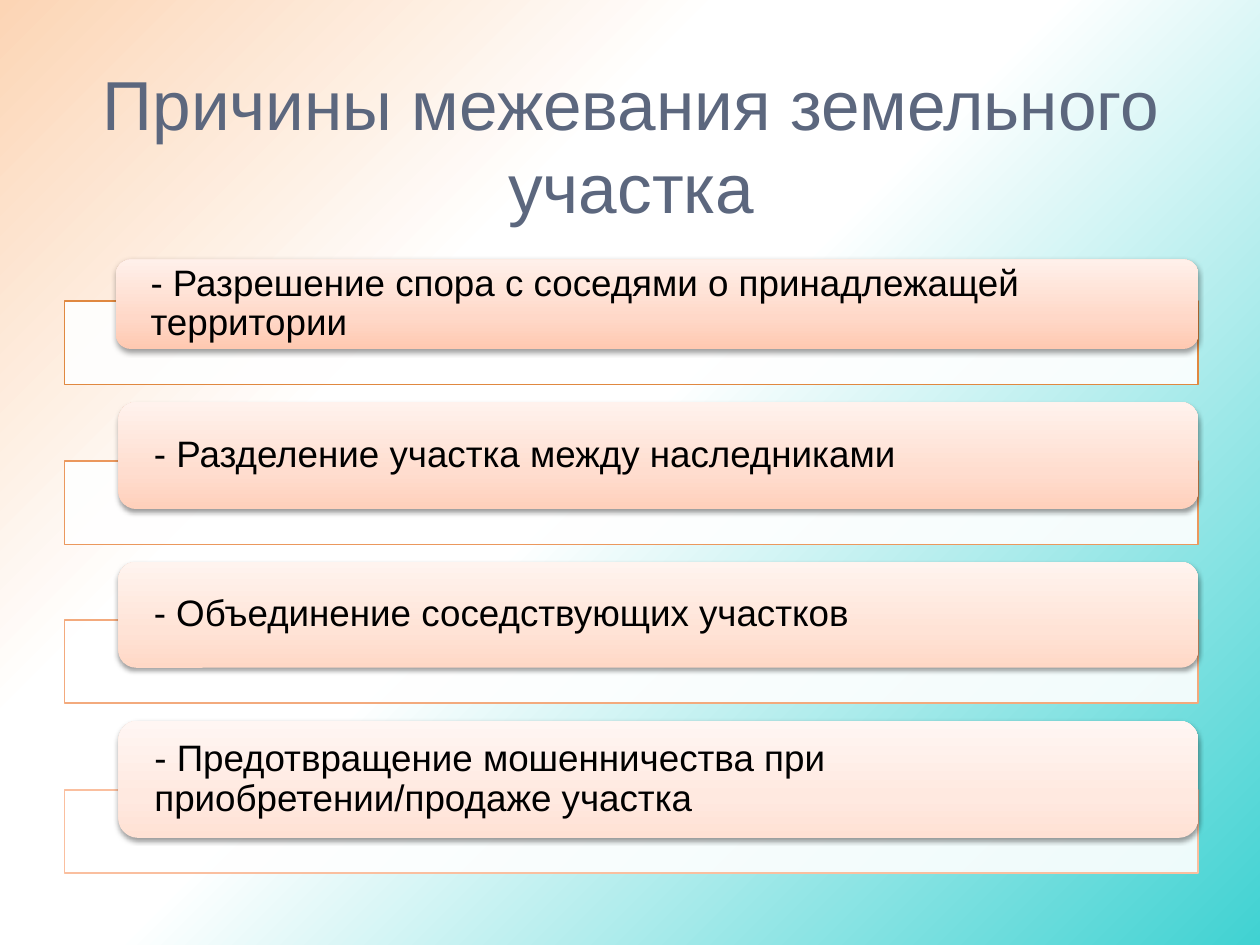
from lxml import etree
from pptx import Presentation
from pptx import util as u
from pptx.dml.color import RGBColor
from pptx.enum import shapes, text
from pptx.oxml.ns import qn

TITLE = "Причины межевания земельного участка"
BACKGROUND = [(0, "FCD5B5"), (33, "FFFFFF"), (48, "FFFFFF"), (100, "40D2D2")]
# wording, pill left, pill height, bar outline, pill gradient from bottom to top
REASONS = [
    ("- Разрешение спора с соседями о принадлежащей территории",
     0.92, 0.71, "E08840", ("FFC9B1", "FFD8C8", "FFF0EA")),
    ("- Разделение участка между наследниками",
     0.94, 0.85, "EB985D", ("FFD0BB", "FFDDCF", "FFF2ED")),
    ("- Объединение соседствующих участков",
     0.94, 0.84, "F3AA7D", ("FFD8C6", "FFE3D6", "FFF4EF")),
    ("- Предотвращение мошенничества при приобретении/продаже участка",
     0.94, 0.93, "FABF9F", ("FFE1D4", "FFE9E0", "FFF6F3")),
]
PILL_STOPS = (0, 35, 100)
LEFT, WIDTH, FIRST_TOP = 0.51, 9, 2.06
BAR_HEIGHT, OVERLAP, GAP = 0.66, 0.38, 0.14


def colour(value):
    return RGBColor.from_string(value)


def add_node(parent, tag, **attributes):
    return etree.SubElement(parent, qn(tag), {k: str(v) for k, v in attributes.items()})


def set_gradient(fill, element, stops, angle):
    """Fill with any number of stops; angle runs counter-clockwise."""
    fill.gradient()
    fill.gradient_angle = angle
    stop_list = next(element.iter(qn("a:gsLst")))
    for old in list(stop_list):
        stop_list.remove(old)
    for position, value in stops:
        stop = add_node(stop_list, "a:gs", pos=position * 1000)
        add_node(stop, "a:srgbClr", val=value)


def add_shadow(shape):
    shape.shadow.inherit = False
    effects = next(shape.element.iter(qn("a:effectLst")))
    shadow = add_node(effects, "a:outerShdw", blurRad=u.Pt(3.1), dist=u.Pt(1.6),
                      dir=90 * 60000, rotWithShape=0)
    add_node(add_node(shadow, "a:srgbClr", val="000000"), "a:alpha", val=38000)


def write(shape, wording, size, ink, align, inset, spacing):
    frame = shape.text_frame
    settings = dict(word_wrap=True, auto_size=text.MSO_AUTO_SIZE.NONE,
                    vertical_anchor=text.MSO_ANCHOR.MIDDLE,
                    margin_left=u.Inches(inset), margin_right=u.Inches(inset),
                    margin_top=0, margin_bottom=0)
    for name, value in settings.items():
        setattr(frame, name, value)
    para = frame.paragraphs[0]
    para.alignment, para.line_spacing = align, spacing
    span = para.add_run()
    span.text = wording
    span.font.name, span.font.size = "Arial", u.Pt(size)
    span.font.color.rgb = colour(ink)


def add_bar(page, top, outline):
    bar = page.shapes.add_shape(shapes.MSO_SHAPE.RECTANGLE,
                                *map(u.Inches, (LEFT, top, WIDTH, BAR_HEIGHT)))
    bar.shadow.inherit = False
    bar.fill.solid()
    bar.fill.fore_color.rgb = colour("FFFFFF")
    add_node(next(bar.element.iter(qn("a:srgbClr"))), "a:alpha", val=90000)
    bar.line.color.rgb = colour(outline)
    bar.line.width = u.Pt(0.75)


def add_pill(page, wording, left, top, height, shades):
    pill = page.shapes.add_shape(
        shapes.MSO_SHAPE.ROUNDED_RECTANGLE,
        *map(u.Inches, (left, top, LEFT + WIDTH - left, height)))
    set_gradient(pill.fill, pill.element, zip(PILL_STOPS, shades), 90)
    pill.line.fill.background()
    add_shadow(pill)
    write(pill, wording, 21, "000000", text.PP_ALIGN.LEFT, 0.24, 0.9)


def main():
    deck = Presentation()
    deck.slide_width, deck.slide_height = u.Inches(10), u.Inches(7.5)
    page = deck.slides.add_slide(deck.slide_layouts[5])
    set_gradient(page.background.fill, page.element, BACKGROUND, 315)

    title = page.shapes.title
    title.left, title.top, title.width, title.height = map(
        u.Inches, (LEFT, 0.52, WIDTH, 1.25))
    write(title, TITLE, 39.6, "5C677E", text.PP_ALIGN.CENTER, 0.1, 1.0)

    top = FIRST_TOP
    for wording, left, height, outline, shades in REASONS:
        bar_top = top + height - OVERLAP
        add_bar(page, bar_top, outline)
        add_pill(page, wording, left, top, height, shades)
        top = bar_top + BAR_HEIGHT + GAP
    deck.save("out.pptx")


if __name__ == "__main__":
    main()
